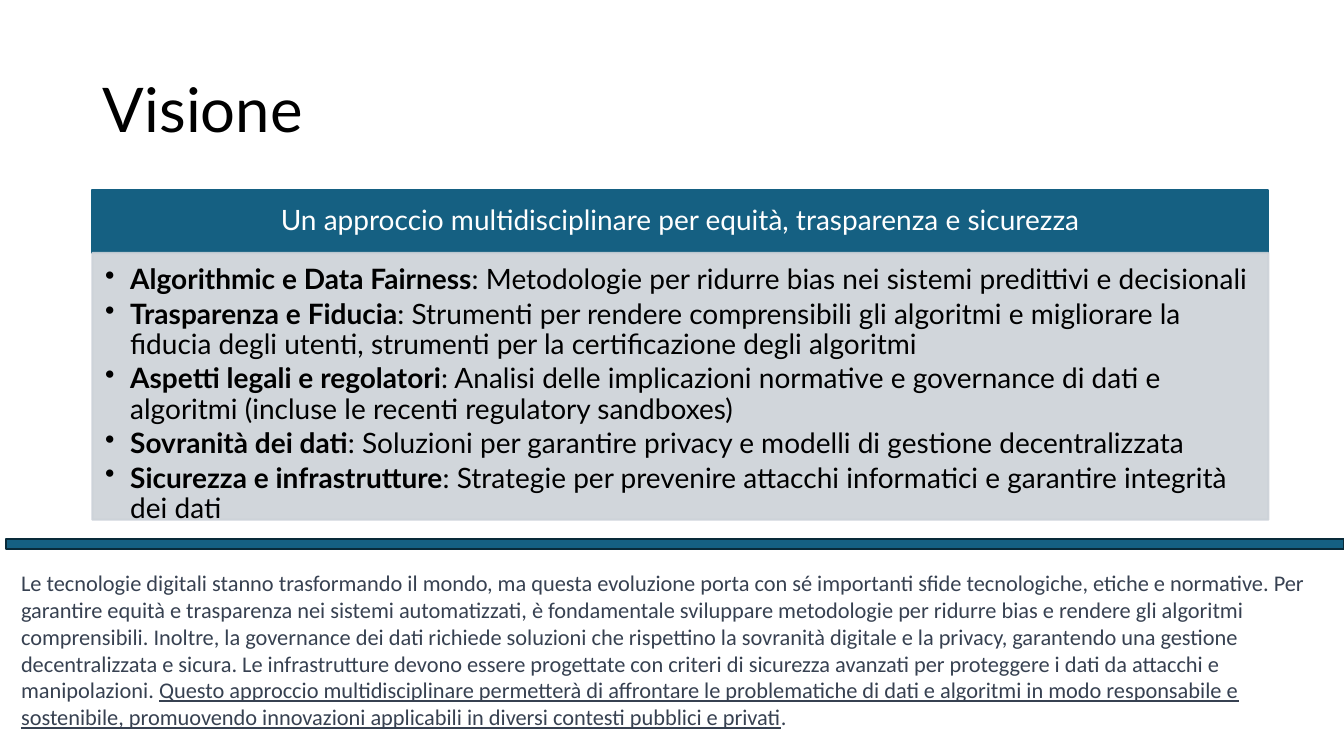
import dataclasses
import typing

import pptx
import pptx.dml.color
import pptx.enum.shapes
import pptx.enum.text
import pptx.oxml.ns
import pptx.presentation
import pptx.shapes.base
import pptx.slide
import pptx.util
from lxml import etree

EMU_PER_PX = 9525
ANCHOR = pptx.enum.text.MSO_ANCHOR
ALIGN = pptx.enum.text.PP_ALIGN


@dataclasses.dataclass(frozen=True)
class Theme:
    heading_font: str = "Lato"
    caption_font: str = "Calibri"
    title_size: int = 44
    body_size: int = 20
    caption_size: int = 16
    line_width: float = 1.5
    black: str = "000000"
    white: str = "FFFFFF"
    teal: str = "156082"
    teal_dark: str = "092A39"
    panel: str = "CCD2D8"
    caption: str = "374151"
    panel_opacity: int = 90


THEME = Theme()


@dataclasses.dataclass(frozen=True)
class Run:
    text: str
    bold: bool = False
    underline: bool = False


@dataclasses.dataclass(frozen=True)
class TextStyle:
    font: str
    size: int
    color: str
    anchor: ANCHOR = ANCHOR.TOP
    align: ALIGN = ALIGN.LEFT
    line_spacing: float = 1.0
    space_after: int = 0
    insets: tuple[int, int, int, int] = (10, 5, 10, 5)
    bullet_indent: int = 0


@dataclasses.dataclass(frozen=True)
class Box:
    left: int
    top: int
    width: int
    height: int
    fill: str | None = None
    line: str | None = None
    opacity: int = 100
    style: TextStyle | None = None
    paragraphs: tuple[tuple[Run, ...], ...] = ()


def px(length: int) -> pptx.util.Emu:
    return pptx.util.Emu(length * EMU_PER_PX)


def set_attributes(target: typing.Any, values: dict[str, typing.Any]) -> None:
    for name, value in values.items():
        setattr(target, name, value)


def paint(shape: pptx.shapes.base.BaseShape, box: Box) -> None:
    shape.shadow.inherit = False
    shape.line.width = pptx.util.Pt(THEME.line_width)
    for fill, color in ((shape.fill, box.fill), (shape.line.fill, box.line)):
        fill.solid()
        fill.fore_color.rgb = pptx.dml.color.RGBColor.from_string(color)
    if box.opacity < 100:
        for color in shape.element.spPr.iter(pptx.oxml.ns.qn("a:srgbClr")):
            alpha = etree.SubElement(color, pptx.oxml.ns.qn("a:alpha"))
            alpha.set("val", str(box.opacity * 1000))


def add_bullet(paragraph: typing.Any, indent: int) -> None:
    properties = paragraph._p.get_or_add_pPr()
    properties.set("marL", str(px(indent)))
    properties.set("indent", str(-px(indent)))
    bullet = etree.SubElement(properties, pptx.oxml.ns.qn("a:buChar"))
    bullet.set("char", "•")


def write(shape: pptx.shapes.base.BaseShape, box: Box, style: TextStyle) -> None:
    frame = shape.text_frame
    left, top, right, bottom = map(px, style.insets)
    set_attributes(frame, {
        "word_wrap": True,
        "vertical_anchor": style.anchor,
        "margin_left": left,
        "margin_top": top,
        "margin_right": right,
        "margin_bottom": bottom,
    })
    for index, runs in enumerate(box.paragraphs):
        paragraph = frame.add_paragraph() if index else frame.paragraphs[0]
        set_attributes(paragraph, {
            "alignment": style.align,
            "line_spacing": style.line_spacing,
            "space_after": pptx.util.Pt(style.space_after),
        })
        if style.bullet_indent:
            add_bullet(paragraph, style.bullet_indent)
        for item in runs:
            run = paragraph.add_run()
            run.text = item.text
            set_attributes(run.font, {
                "name": style.font,
                "size": pptx.util.Pt(style.size),
                "bold": item.bold,
                "underline": item.underline,
            })
            run.font.color.rgb = pptx.dml.color.RGBColor.from_string(style.color)


def draw(slide: pptx.slide.Slide, box: Box) -> None:
    bounds = tuple(map(px, (box.left, box.top, box.width, box.height)))
    if box.fill:
        rectangle = pptx.enum.shapes.MSO_SHAPE.RECTANGLE
        shape = slide.shapes.add_shape(rectangle, *bounds)
        paint(shape, box)
    else:
        shape = slide.shapes.add_textbox(*bounds)
    if box.style:
        write(shape, box, box.style)


TITLE_STYLE = TextStyle(THEME.heading_font, THEME.title_size, THEME.black,
                        anchor=ANCHOR.MIDDLE, line_spacing=0.9)
BAND_STYLE = TextStyle(THEME.heading_font, THEME.body_size, THEME.white,
                       anchor=ANCHOR.MIDDLE, align=ALIGN.CENTER,
                       line_spacing=0.9, insets=(15, 9, 15, 9))
TOPIC_STYLE = TextStyle(THEME.heading_font, THEME.body_size, THEME.black,
                        line_spacing=0.9, space_after=3,
                        insets=(12, 12, 15, 16), bullet_indent=24)
CAPTION_STYLE = TextStyle(THEME.caption_font, THEME.caption_size, THEME.caption)

TOPICS = {
    "Algorithmic e Data Fairness": "Metodologie per ridurre bias nei sistemi predittivi e decisionali",
    "Trasparenza e Fiducia": "Strumenti per rendere comprensibili gli algoritmi e migliorare la "
                             "fiducia degli utenti, strumenti per la certificazione degli algoritmi",
    "Aspetti legali e regolatori": "Analisi delle implicazioni normative e governance di dati e "
                                   "algoritmi (incluse le recenti regulatory sandboxes)",
    "Sovranità dei dati": "Soluzioni per garantire privacy e modelli di gestione decentralizzata",
    "Sicurezza e infrastrutture": "Strategie per prevenire attacchi informatici e garantire "
                                  "integrità dei dati",
}
CAPTION = (
    Run("Le tecnologie digitali stanno trasformando il mondo, ma questa evoluzione porta con sé "
        "importanti sfide tecnologiche, etiche e normative. Per garantire equità e trasparenza nei "
        "sistemi automatizzati, è fondamentale sviluppare metodologie per ridurre bias e rendere gli "
        "algoritmi comprensibili. Inoltre, la governance dei dati richiede soluzioni che rispettino "
        "la sovranità digitale e la privacy, garantendo una gestione decentralizzata e sicura. Le "
        "infrastrutture devono essere progettate con criteri di sicurezza avanzati per proteggere i "
        "dati da attacchi e manipolazioni. "),
    Run("Questo approccio multidisciplinare permetterà di affrontare le problematiche di dati e "
        "algoritmi in modo responsabile e sostenibile, promuovendo innovazioni applicabili in "
        "diversi contesti pubblici e privati", underline=True),
    Run("."),
)
BOXES = (
    Box(88, 38, 1104, 139, style=TITLE_STYLE, paragraphs=((Run("Visione"),),)),
    Box(88, 181, 1120, 60, THEME.teal, THEME.teal, style=BAND_STYLE, paragraphs=(
        (Run("Un approccio multidisciplinare per equità, trasparenza e sicurezza"),),)),
    Box(88, 241, 1120, 254, THEME.panel, THEME.panel, THEME.panel_opacity, TOPIC_STYLE,
        tuple((Run(name, bold=True), Run(f": {detail}")) for name, detail in TOPICS.items())),
    Box(6, 513, 1274, 10, THEME.teal, THEME.teal_dark),
    Box(10, 537, 1268, 165, style=CAPTION_STYLE, paragraphs=(CAPTION,)),
)


def main() -> None:
    presentation = pptx.Presentation()
    set_attributes(presentation, {"slide_width": px(1280), "slide_height": px(720)})
    slide = presentation.slides.add_slide(presentation.slide_layouts[6])
    for box in BOXES:
        draw(slide, box)
    presentation.save("out.pptx")


if __name__ == "__main__":
    main()
